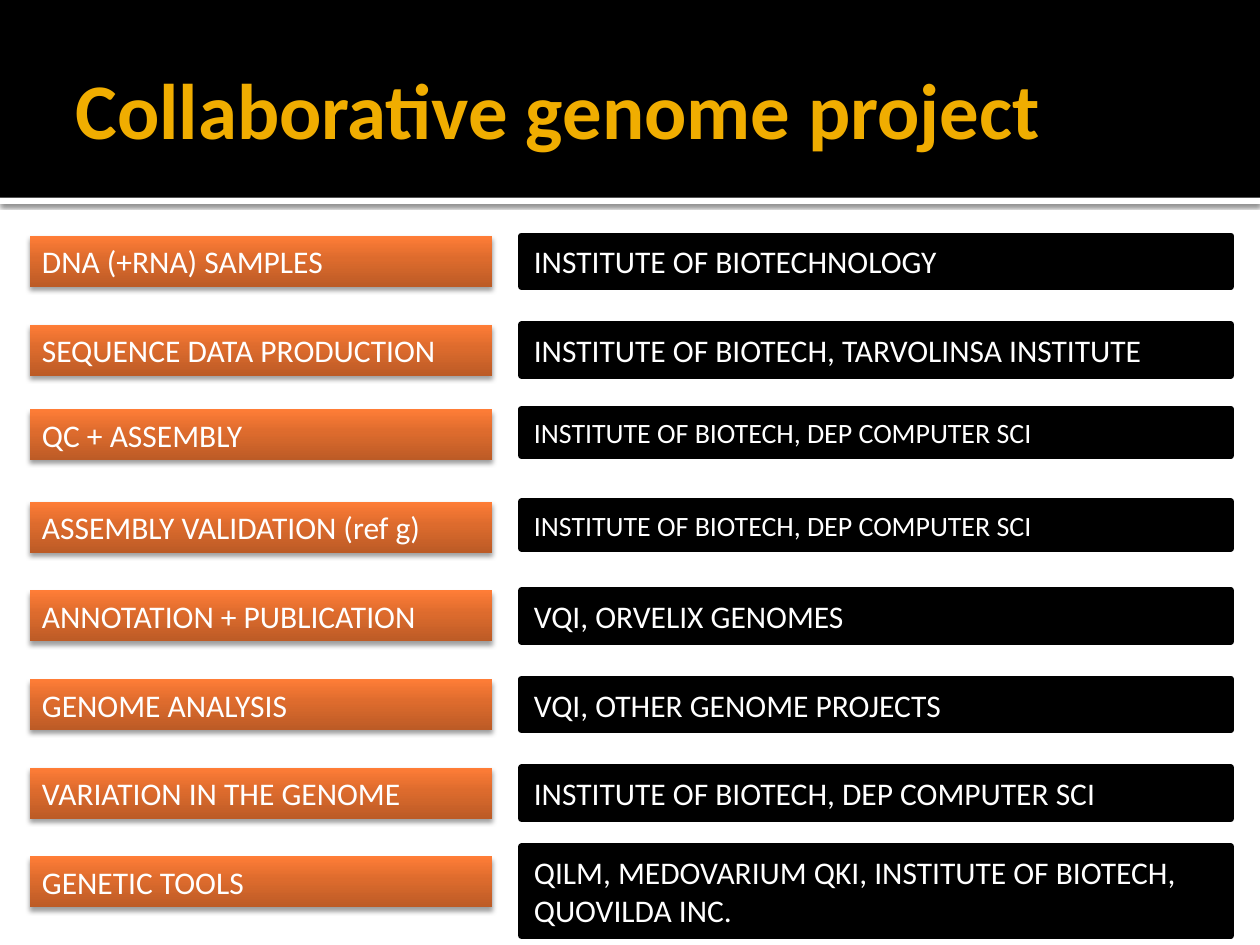
from copy import deepcopy

from lxml.etree import SubElement
from pptx import Presentation
from pptx.dml.color import RGBColor
from pptx.enum.shapes import MSO_SHAPE
from pptx.enum.text import MSO_ANCHOR, PP_ALIGN
from pptx.oxml.ns import qn
from pptx.util import Pt

FONT = "Calibri"
WHITE, BLACK, GOLD = "FFFFFF", "000000", "F0AD00"
ORANGE_STOPS = [(0, "BC5B26"), (0.55, "DD6B2D"), (1, "FF7D37")]
TASK_HEIGHT = 29.1

# Task, partners, top of task, partner text size, top and height of partner box
ROWS = [
    ("DNA (+RNA) SAMPLES", "INSTITUTE OF BIOTECHNOLOGY", 134.8, 18, 134.8, 29.1),
    ("SEQUENCE DATA PRODUCTION", "INSTITUTE OF BIOTECH, TARVOLINSA INSTITUTE",
     185.5, 18, 185.5, 29.1),
    ("QC + ASSEMBLY", "INSTITUTE OF BIOTECH, DEP COMPUTER SCI", 233.8, 16, 233.8, 26.7),
    ("ASSEMBLY VALIDATION (ref g)", "INSTITUTE OF BIOTECH, DEP COMPUTER SCI",
     286.7, 16, 286.7, 26.7),
    ("ANNOTATION + PUBLICATION", "VQI, ORVELIX GENOMES", 337.4, 18, 337.4, 29.1),
    ("GENOME ANALYSIS", "VQI, OTHER GENOME PROJECTS", 388, 18, 388, 29.1),
    ("VARIATION IN THE GENOME", "INSTITUTE OF BIOTECH, DEP COMPUTER SCI",
     438.7, 18, 438.7, 29.1),
    ("GENETIC TOOLS", "QILM, MEDOVARIUM QKI, INSTITUTE OF BIOTECH, QUOVILDA INC.",
     489.4, 18, 483.8, 50.9),
]


def color(value):
    return RGBColor.from_string(value)


def add_box(page, left, top, width, height, fill=BLACK):
    box = page.shapes.add_shape(
        MSO_SHAPE.RECTANGLE, Pt(left), Pt(top), Pt(width), Pt(height))
    box.fill.solid()
    box.fill.fore_color.rgb = color(fill)
    box.line.fill.background()
    box.shadow.inherit = False
    return box


def add_shadow(box, blur, distance, opacity):
    effects = box.element.spPr.find(qn("a:effectLst"))
    shadow = SubElement(effects, qn("a:outerShdw"), blurRad=str(Pt(blur)),
                        dist=str(Pt(distance)), dir="5400000", rotWithShape="0")
    tint = SubElement(shadow, qn("a:srgbClr"), val=BLACK)
    SubElement(tint, qn("a:alpha"), val=str(opacity * 1000))


def fill_gradient(box, stops):
    box.fill.gradient()
    box.fill.gradient_angle = 90
    stop_list = box.element.spPr.find(qn("a:gradFill")).find(qn("a:gsLst"))
    stop_list.append(deepcopy(stop_list[-1]))
    for stop, (position, value) in zip(box.fill.gradient_stops, stops):
        stop.position = position
        stop.color.rgb = color(value)


def set_text(box, text, size, ink=WHITE, bold=False):
    frame = box.text_frame
    frame.text = text
    frame.word_wrap = True
    frame.vertical_anchor = MSO_ANCHOR.MIDDLE
    para = frame.paragraphs[0]
    para.alignment = PP_ALIGN.LEFT
    font = para.runs[0].font
    font.name, font.size, font.bold = FONT, Pt(size), bold
    font.color.rgb = color(ink)


def add_header(page, left, top, width, height):
    # White rule with a shadow, then the black band
    rule = add_box(page, left, top + height, width, 3.6, WHITE)
    add_shadow(rule, 2.5, 0.8, 60)
    add_box(page, left, top, width, height)

    # Title, brought in front of the band
    title = page.shapes.title
    title.left, title.top = Pt(left + 36), Pt(top + 12.2)
    title.width, title.height = Pt(width - 72), Pt(98.6)
    set_text(title, "Collaborative genome project", 45, GOLD, bold=True)
    frame = title.text_frame
    frame.margin_left = Pt(7.2)
    frame.margin_right = frame.margin_top = frame.margin_bottom = Pt(3.6)
    page.shapes.element.append(title.element)


def add_tasks(page, left, width):
    for task, _, top, *_ in ROWS:
        box = add_box(page, left, top, width, TASK_HEIGHT)
        fill_gradient(box, ORANGE_STOPS)
        add_shadow(box, 3.1, 2, 38)
        set_text(box, task, 18)


def add_partners(page, left, width):
    for _, partners, _, size, top, height in ROWS:
        box = add_box(page, left, top, width, height)
        box.line.color.rgb = color(BLACK)
        box.line.width = Pt(3.78)
        set_text(box, partners, size)


def main():
    deck = Presentation()
    deck.slide_width, deck.slide_height = Pt(720), Pt(540)
    page = deck.slides.add_slide(deck.slide_layouts[5])
    add_header(page, 0, 0, 720, 113)
    add_tasks(page, 16.9, 264.3)
    add_partners(page, 298, 405.4)
    deck.save("out.pptx")


if __name__ == "__main__":
    main()
